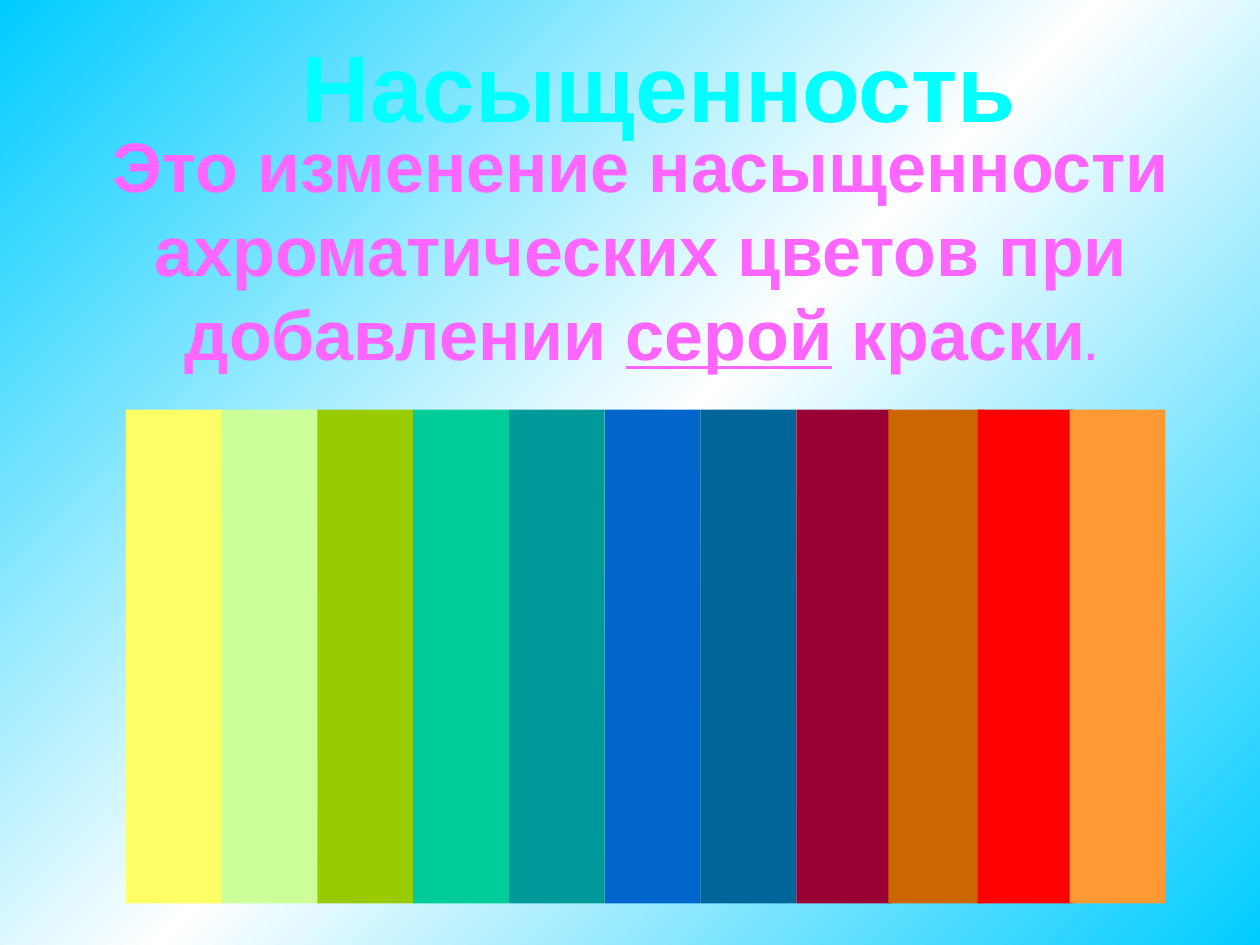
"""Build a slide on colour saturation with a row of colour bars."""
from copy import deepcopy
from pptx import Presentation
from pptx.dml.color import RGBColor
from pptx.enum.shapes import MSO_SHAPE as Shape
from pptx.enum.text import MSO_ANCHOR as Anchor, PP_ALIGN as Align
from pptx.oxml.ns import qn
from pptx.util import Inches, Pt

TITLE = [("Насыщенность", {"size": 54})]
BODY = [
    ("Это изменение насыщенности ахроматических цветов при добавлении ", {}),
    ("серой", {"line": True}),
    (" краски", {}),
    (".", {"size": 24}),
]
STOPS = [(0, "00CCFF"), (0.5, "FFFFFF"), (1, "00CCFF")]
STEP = 0.76
BARS = [
    ("FFFF66", STEP), ("CCFF99", STEP), ("99CC00", STEP), ("00CC99", STEP),
    ("009999", STEP), ("0066CC", STEP), ("006699", STEP), ("990033", 0.73),
    ("CC6600", 0.71), ("FF0000", 0.73), ("FF9933", STEP),
]


def rgb(code):
    return RGBColor.from_string(code)


def put_text(slide, runs, box, color, wrap=True, side=0.1, pitch=None):
    frame = slide.shapes.add_textbox(*map(Inches, box)).text_frame
    frame.word_wrap = wrap
    frame.vertical_anchor = Anchor.TOP
    frame.margin_left = frame.margin_right = Inches(side)
    para = frame.paragraphs[0]
    para.alignment = Align.CENTER
    if pitch:
        para.line_spacing = Pt(pitch)
    for text, look in runs:
        run = para.add_run()
        run.text = text
        font = run.font
        font.name, font.bold = "Arial", True
        font.size = Pt(look.get("size", 40))
        font.underline = look.get("line", False)
        font.color.rgb = rgb(color)


def paint_back(slide):
    fill = slide.background.fill
    fill.gradient()
    fill.gradient_angle = 315
    group = next(slide.element.iter(qn("a:gsLst")))
    group.append(deepcopy(group[0]))
    for stop, (place, color) in zip(fill.gradient_stops, STOPS):
        stop.position = place
        stop.color.rgb = rgb(color)


def put_bars(slide):
    group = slide.shapes.add_group_shape()
    left = 1
    for color, step in BARS:
        box = map(Inches, (left, 3.25, STEP, 3.92))
        bar = group.shapes.add_shape(Shape.RECTANGLE, *box)
        bar.shadow.inherit = False
        bar.fill.solid()
        bar.fill.fore_color.rgb = rgb(color)
        bar.line.fill.background()
        left += step


def main():
    deck = Presentation()
    deck.slide_width, deck.slide_height = Inches(10), Inches(7.5)
    slide = deck.slides.add_slide(deck.slide_layouts[6])
    paint_back(slide)
    put_text(slide, TITLE, (2.33, 0.17, 5.8, 0.88), "00FFFF",
             wrap=False, side=0)
    put_bars(slide)
    put_text(slide, BODY, (0.5, 0.92, 9.17, 2.1), "FF66FF", pitch=48)
    deck.save("out.pptx")


if __name__ == "__main__":
    main()
